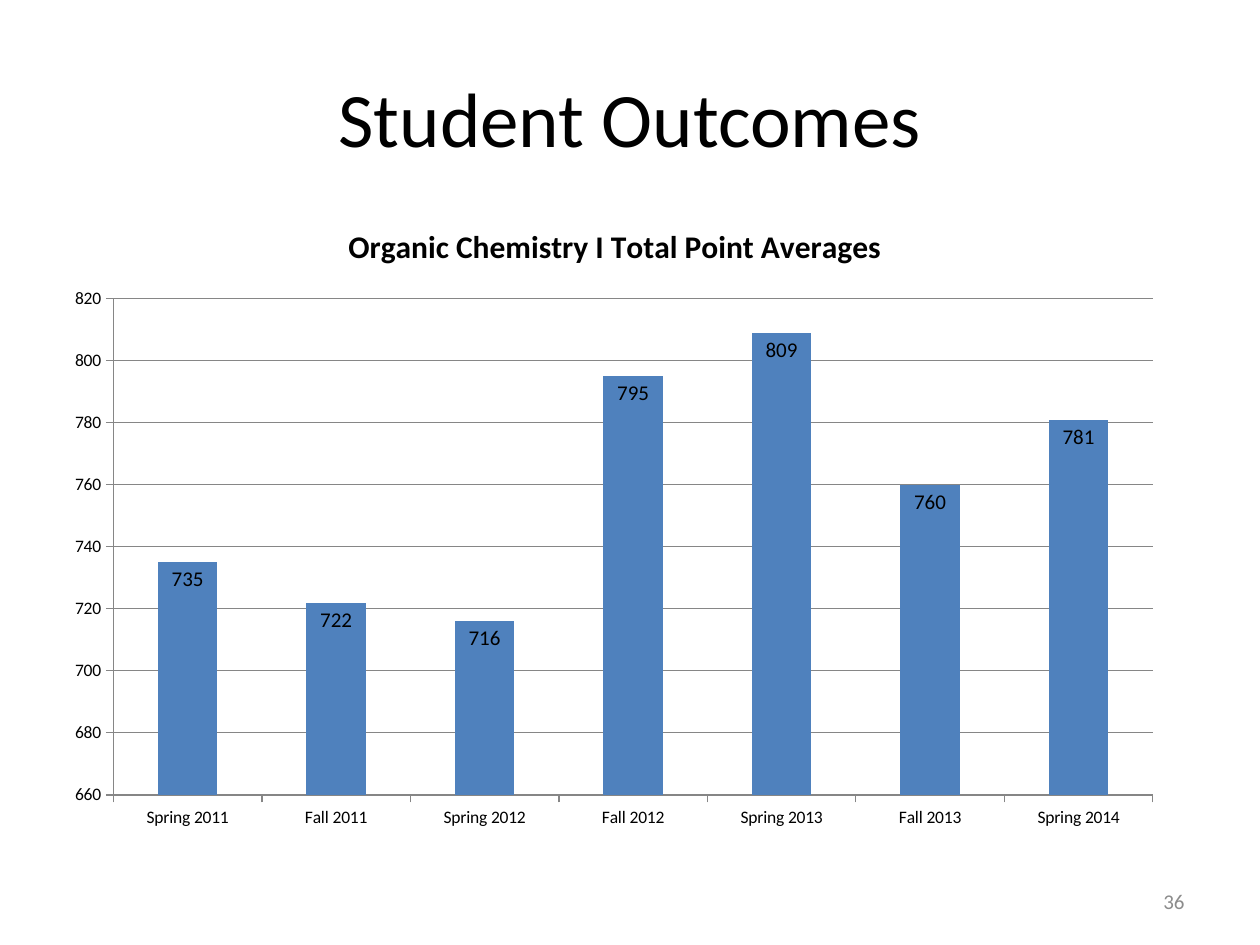
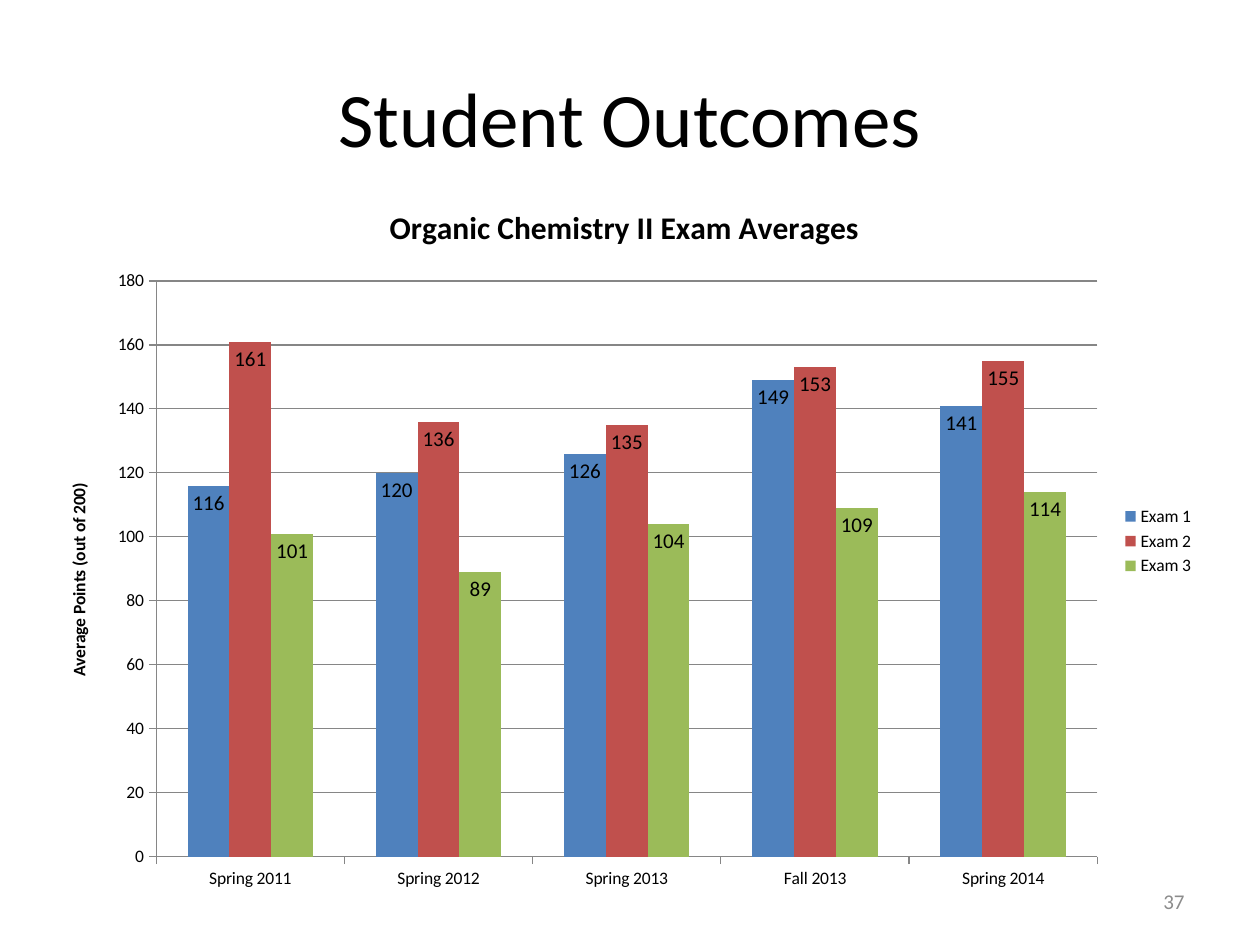
import pptx
import pptx.util
import pptx.chart.data
import pptx.dml.color
import pptx.enum.chart
import pptx.enum.text
import lxml.etree

Inches = pptx.util.Inches
Pt = pptx.util.Pt
Align = pptx.enum.text.PP_ALIGN
RGB = pptx.dml.color.RGBColor.from_string

COLORS = {
    "text": "000000", "number": "8C8C8C", "line": "868686",
    "first": "4F81BD", "second": "C0504D", "third": "9BBB59",
}
SERIES_COLORS = [COLORS[key] for key in ("first", "second", "third")]
FONT = "Calibri"
WIDTH, HEIGHT = 10, 7.5
MARGIN = WIDTH / 20

OUTCOMES = [
    {
        "heading": "Organic Chemistry I Total Point Averages",
        "number": "36",
        "frame": (0.42, 1.58, 8.92, 5.08),
        "plot": (0.9, 2.37, 8.25, 3.94),
        "scale": (660, 820, 20),
        "terms": ["Spring 2011", "Fall 2011", "Spring 2012", "Fall 2012",
                  "Spring 2013", "Fall 2013", "Spring 2014"],
        "scores": {"Series 1": [735, 722, 716, 795, 809, 760, 781]},
        "axis_title": None,
    },
    {
        "heading": "Organic Chemistry II Exam Averages",
        "number": "37",
        "frame": (0.33, 1.42, 9.25, 5.75),
        "plot": (1.24, 2.23, 7.47, 4.57),
        "scale": (0, 180, 20),
        "terms": ["Spring 2011", "Spring 2012", "Spring 2013", "Fall 2013", "Spring 2014"],
        "scores": {
            "Exam 1": [116, 120, 126, 149, 141],
            "Exam 2": [161, 136, 135, 153, 155],
            "Exam 3": [101, 89, 104, 109, 114],
        },
        "axis_title": "Average Points (out of 200)",
    },
]


def write(frame, text, size, color="text", bold=False, align=Align.CENTER):
    paragraph = frame.paragraphs[0]
    paragraph.alignment = align
    run = paragraph.add_run()
    run.text = text
    run.font.name = FONT
    run.font.size = Pt(size)
    run.font.bold = bold
    run.font.color.rgb = RGB(COLORS[color])


def place_plot(chart, frame, plot):
    area = chart._chartSpace.chart.plotArea
    namespace = area.nsmap["c"]
    for old in area.findall(f"{{{namespace}}}layout"):
        area.remove(old)
    layout = lxml.etree.Element(f"{{{namespace}}}layout")
    manual = lxml.etree.SubElement(layout, f"{{{namespace}}}manualLayout")
    left, top, width, height = frame
    settings = {
        "layoutTarget": "inner", "xMode": "edge", "yMode": "edge",
        "x": (plot[0] - left) / width, "y": (plot[1] - top) / height,
        "w": plot[2] / width, "h": plot[3] / height,
    }
    for tag, value in settings.items():
        lxml.etree.SubElement(manual, f"{{{namespace}}}{tag}", val=str(value))
    area.insert(0, layout)


deck = pptx.Presentation()
deck.slide_width = Inches(WIDTH)
deck.slide_height = Inches(HEIGHT)

for outcome in OUTCOMES:
    slide = deck.slides.add_slide(deck.slide_layouts[5])
    title = slide.shapes.title
    title.left, title.top = Inches(MARGIN), Inches(HEIGHT * 0.04)
    title.width, title.height = Inches(WIDTH - 2 * MARGIN), Inches(HEIGHT / 6)
    title.text_frame.vertical_anchor = pptx.enum.text.MSO_ANCHOR.MIDDLE
    write(title.text_frame, "Student Outcomes", size=44)

    averages = pptx.chart.data.CategoryChartData()
    averages.categories = outcome["terms"]
    for name, values in outcome["scores"].items():
        averages.add_series(name, values)
    chart = slide.shapes.add_chart(
        pptx.enum.chart.XL_CHART_TYPE.COLUMN_CLUSTERED,
        *map(Inches, outcome["frame"]), averages).chart
    chart.font.name = FONT
    chart.font.size = Pt(10)
    chart.font.color.rgb = RGB(COLORS["text"])
    chart.has_title = True
    write(chart.chart_title.text_frame, outcome["heading"], size=18, bold=True)
    chart.chart_title.include_in_layout = False
    place_plot(chart, outcome["frame"], outcome["plot"])

    chart.has_legend = len(outcome["scores"]) > 1
    if chart.has_legend:
        chart.legend.position = pptx.enum.chart.XL_LEGEND_POSITION.RIGHT
        chart.legend.include_in_layout = False

    points = chart.value_axis
    points.minimum_scale, points.maximum_scale, points.major_unit = outcome["scale"]
    points.has_major_gridlines = True
    if outcome["axis_title"]:
        write(points.axis_title.text_frame, outcome["axis_title"], size=10, bold=True)
    for axis in (points, chart.category_axis):
        axis.major_tick_mark = pptx.enum.chart.XL_TICK_MARK.OUTSIDE
    for rule in (points.format, chart.category_axis.format, points.major_gridlines.format):
        rule.line.color.rgb = RGB(COLORS["line"])
        rule.line.width = Pt(0.75)

    columns = chart.plots[0]
    columns.gap_width = 150
    columns.overlap = 0
    columns.vary_by_categories = False
    for exam, color in zip(columns.series, SERIES_COLORS):
        exam.format.fill.solid()
        exam.format.fill.fore_color.rgb = RGB(color)
        exam.invert_if_negative = False
        labels = exam.data_labels
        labels.show_value = True
        labels.position = pptx.enum.chart.XL_LABEL_POSITION.INSIDE_END
        labels.font.name = FONT
        labels.font.size = Pt(12)
        labels.font.color.rgb = RGB(COLORS["text"])

    number_width = WIDTH * 7 / 30
    page_number = slide.shapes.add_textbox(
        Inches(WIDTH - MARGIN - number_width), Inches(6.95),
        Inches(number_width), Inches(0.4)).text_frame
    page_number.word_wrap = True
    page_number.vertical_anchor = pptx.enum.text.MSO_ANCHOR.MIDDLE
    write(page_number, outcome["number"], size=12, color="number", align=Align.RIGHT)

deck.save("out.pptx")
